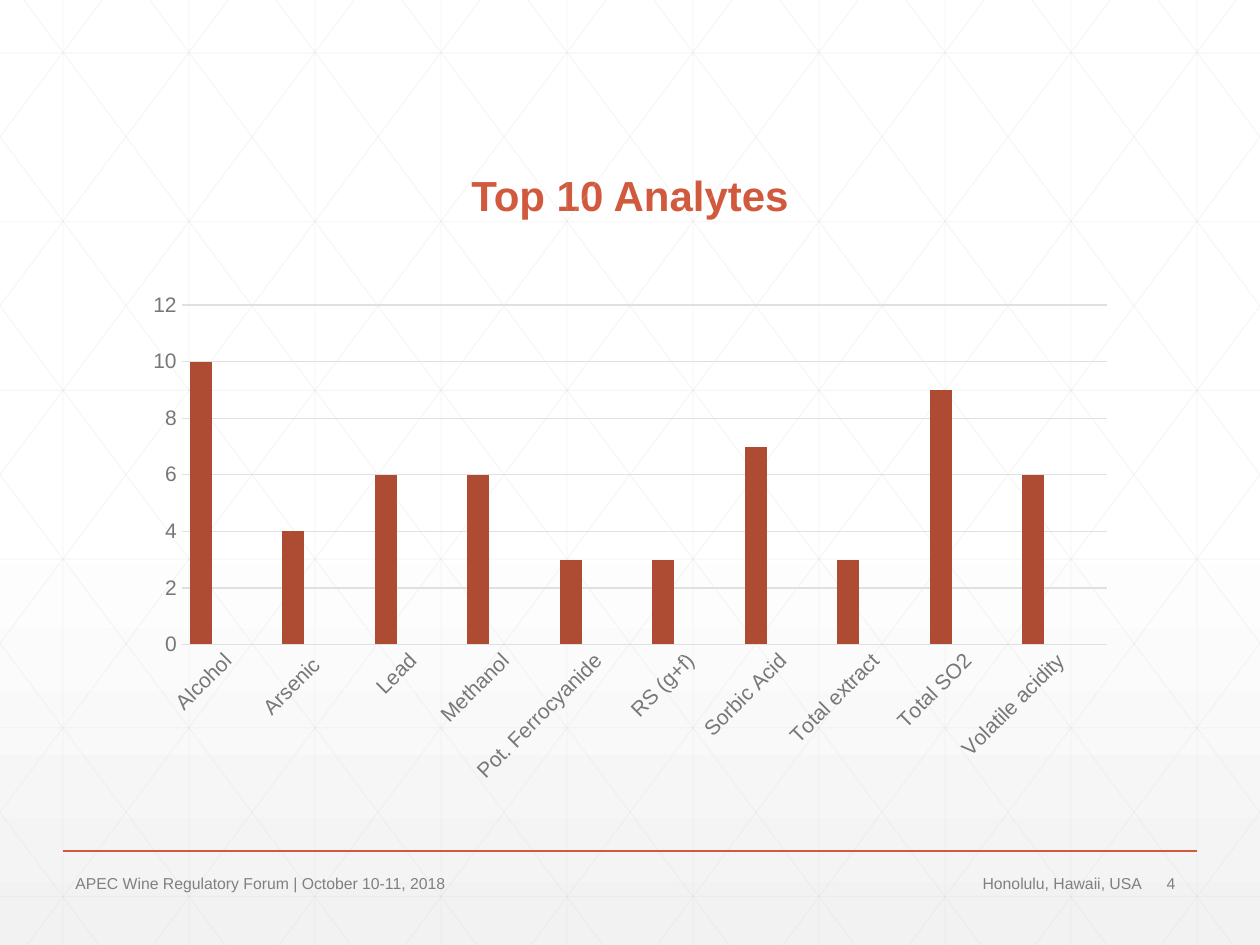
from typing import NamedTuple

from lxml import etree
from pptx import Presentation
from pptx.chart import data
from pptx.dml.color import RGBColor
from pptx.enum import chart as ch, shapes, text
from pptx.oxml import ns
from pptx.util import Cm, Pt

WIDTH, HEIGHT = 25.4, 19.05  # cm, like every other length below
STEP = 2.54
ROW_STEP = 3.4
FIRST_COLUMN, FIRST_ROW, FIRST_DIAGONAL = 1.27, 1.07, 0.48
SLOPE = 1.34
MARGIN = 1.27
FOOTER_TOP, FOOTER_HEIGHT = 17.48, 0.61

FONT = "Arial"
WHITE = RGBColor(0xFF, 0xFF, 0xFF)
PALE_GREY = RGBColor(0xF2, 0xF2, 0xF2)
LATTICE = RGBColor(0xD9, 0xD9, 0xD9)
GRID = RGBColor(0xDF, 0xE0, 0xDF)
AXIS_TEXT = RGBColor(0x76, 0x78, 0x76)
CHART_TEXT = RGBColor(0x2D, 0x2E, 0x2D)
FOOTER_TEXT = RGBColor(0x80, 0x80, 0x80)
RUST = RGBColor(0xD1, 0x5A, 0x3E)
DARK_RUST = RGBColor(0xAD, 0x4B, 0x33)
PINK = RGBColor(0xE2, 0xAD, 0xA6)


class Line(NamedTuple):
    x1: float
    y1: float
    x2: float
    y2: float


class FooterItem(NamedTuple):
    content: str
    left: float
    width: float
    align: text.PP_ALIGN


ANALYTES = {
    "Alcohol": 10, "Arsenic ": 4, "Lead": 6, "Methanol": 6,
    "Pot. Ferrocyanide": 3, "RS (g+f)": 3, "Sorbic Acid": 7,
    "Total extract": 3, "Total SO2": 9, "Volatile acidity": 6,
}
FOOTER = [
    FooterItem("Honolulu, Hawaii, USA", 14.17, 9.1, text.PP_ALIGN.RIGHT),
    FooterItem("APEC Wine Regulatory Forum | October 10-11, 2018",
               MARGIN, 12.78, text.PP_ALIGN.LEFT),
    FooterItem("4", 23.27, 0.86, text.PP_ALIGN.LEFT),
]


def style_font(font, size: float, color: RGBColor, bold: bool = False) -> None:
    font.name, font.size, font.bold = FONT, Pt(size), bold
    font.color.rgb = color


def draw_line(s, line: Line, color: RGBColor, width: float,
              opacity: int = 100) -> None:
    cxn = s.shapes.add_connector(shapes.MSO_CONNECTOR.STRAIGHT,
                                 *(Cm(v) for v in line))
    cxn.line.color.rgb = color
    cxn.line.width = Pt(width)
    props = cxn._element.spPr
    if opacity < 100:
        clr = props.find(".//" + ns.qn("a:srgbClr"))
        etree.SubElement(clr, ns.qn("a:alpha"), val=str(opacity * 1000))
    etree.SubElement(props, ns.qn("a:effectLst"))


def diagonal(start: float) -> Line:
    """Falling line that meets the top edge at start, cut off at the slide edges."""
    x1 = max(start, 0)
    x2 = min(start + HEIGHT / SLOPE, WIDTH)
    return Line(x1, (x1 - start) * SLOPE, x2, (x2 - start) * SLOPE)


def lattice_lines() -> list[Line]:
    columns = [FIRST_COLUMN + STEP * i for i in range(10)]
    rows = [FIRST_ROW + ROW_STEP * i for i in range(6)]
    falling = [diagonal(FIRST_DIAGONAL + STEP * i) for i in range(-5, 10)]
    rising = [Line(WIDTH - d.x1, d.y1, WIDTH - d.x2, d.y2) for d in falling]
    return ([Line(x, 0, x, HEIGHT) for x in columns]
            + [Line(0, y, WIDTH, y) for y in rows] + falling + rising)


def paint_background(s) -> None:
    fill = s.background.fill
    fill.gradient()
    fill.gradient_angle = 270
    for stop, position, color in zip(fill.gradient_stops, (0.53, 1),
                                     (WHITE, PALE_GREY)):
        stop.position = position
        stop.color.rgb = color


def write_title(s, content: str) -> None:
    sp = s.shapes.title
    sp.left, sp.top, sp.width, sp.height = map(Cm, (2.69, 1.4, 20.02, 3.18))
    tf = sp.text_frame
    tf.text = content
    tf.vertical_anchor = text.MSO_ANCHOR.BOTTOM
    p = tf.paragraphs[0]
    p.alignment = text.PP_ALIGN.CENTER
    p.line_spacing = 0.9
    style_font(p.runs[0].font, 24, RUST, bold=True)


def add_analyte_chart(s) -> None:
    cd = data.CategoryChartData()
    cd.categories = list(ANALYTES)
    cd.add_series("Series 1", list(ANALYTES.values()))
    for name in ("Series 2", "Series 3"):
        cd.add_series(name, [None] * len(ANALYTES))
    chart = s.shapes.add_chart(ch.XL_CHART_TYPE.COLUMN_CLUSTERED, Cm(2.69),
                               Cm(5.72), Cm(20.02), Cm(10.26), cd).chart
    chart.has_title = chart.has_legend = False
    style_font(chart.font, 10, CHART_TEXT)

    plot = chart.plots[0]
    plot.vary_by_categories = False
    plot.gap_width, plot.overlap = 75, -25
    for series, color in zip(plot.series, (DARK_RUST, RUST, PINK)):
        series.format.fill.solid()
        series.format.fill.fore_color.rgb = color

    cats, vals = chart.category_axis, chart.value_axis
    for axis in (cats, vals):
        axis.major_tick_mark = axis.minor_tick_mark = ch.XL_TICK_MARK.NONE
        style_font(axis.tick_labels.font, 12, AXIS_TEXT)
    vals.minimum_scale, vals.maximum_scale, vals.major_unit = 0, 12, 2
    vals.has_major_gridlines = True
    vals.format.line.fill.background()
    for line in (cats.format.line, vals.major_gridlines.format.line):
        line.color.rgb = GRID
        line.width = Pt(0.75)
    label_body = cats._element.find(".//" + ns.qn("a:bodyPr"))
    label_body.set("rot", str(-45 * 60000))


def add_footer_item(s, item: FooterItem) -> None:
    tf = s.shapes.add_textbox(Cm(item.left), Cm(FOOTER_TOP), Cm(item.width),
                              Cm(FOOTER_HEIGHT)).text_frame
    tf.word_wrap = True
    tf.text = item.content
    p = tf.paragraphs[0]
    p.alignment = item.align
    style_font(p.runs[0].font, 9, FOOTER_TEXT)


def main() -> None:
    prs = Presentation()
    prs.slide_width, prs.slide_height = Cm(WIDTH), Cm(HEIGHT)
    s = prs.slides.add_slide(prs.slide_layouts.get_by_name("Title Only"))
    paint_background(s)
    for line in lattice_lines():
        draw_line(s, line, LATTICE, 0.5, opacity=25)
    draw_line(s, Line(MARGIN, 17.15, WIDTH - MARGIN, 17.15), RUST, 1)
    write_title(s, "Top 10 Analytes")
    add_analyte_chart(s)
    for item in FOOTER:
        add_footer_item(s, item)
    prs.save("out.pptx")


if __name__ == "__main__":
    main()
